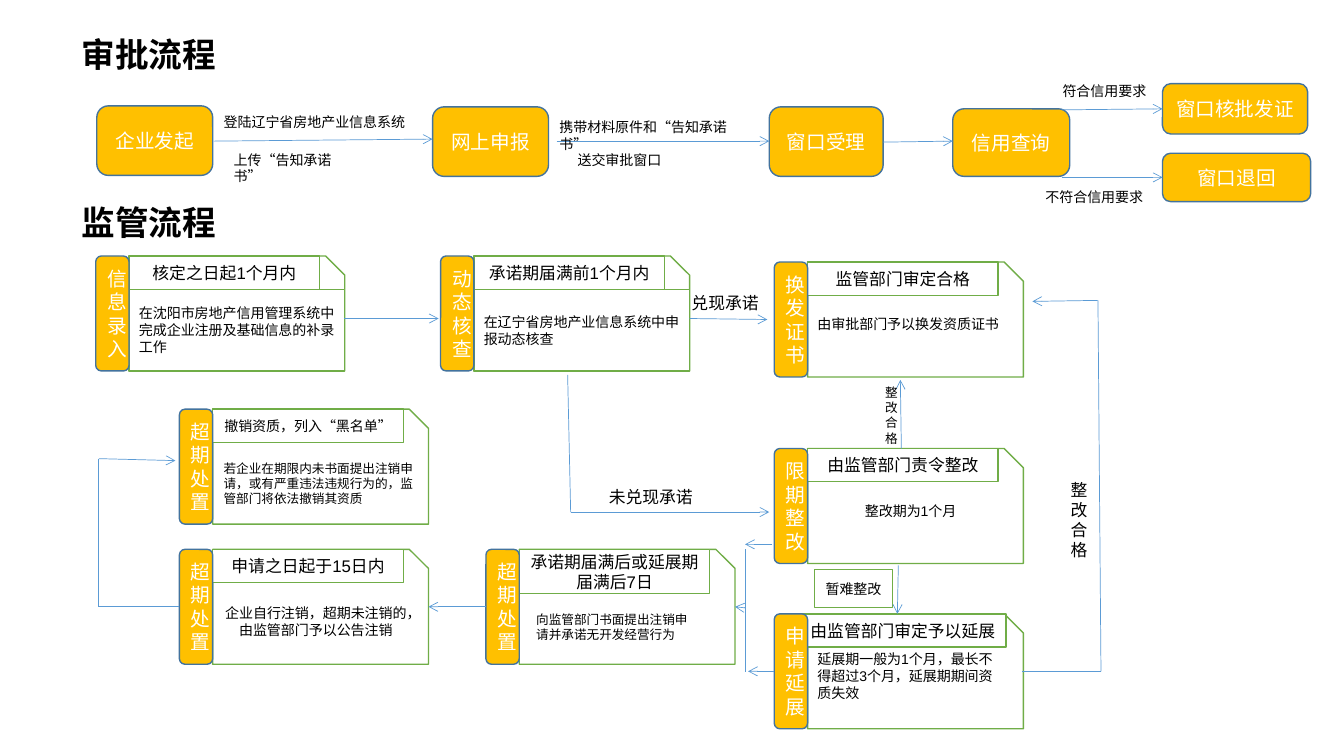
from dataclasses import dataclass
from itertools import pairwise

from lxml.etree import SubElement
from pptx import Presentation
from pptx.dml.color import RGBColor
from pptx.enum.shapes import MSO_CONNECTOR, MSO_SHAPE as Preset
from pptx.enum.text import MSO_ANCHOR as Anchor, MSO_AUTO_SIZE, PP_ALIGN as Align
from pptx.oxml.ns import qn
from pptx.shapes.autoshape import Shape
from pptx.slide import Slide
from pptx.text.text import TextFrame
from pptx.util import Emu, Pt

PX = 9144  # 100 px to the inch

BLACK = RGBColor(0x00, 0x00, 0x00)
WHITE = RGBColor(0xFF, 0xFF, 0xFF)
AMBER = RGBColor(0xFF, 0xC0, 0x00)
STEEL = RGBColor(0x43, 0x73, 0x9E)
GREEN = RGBColor(0x70, 0xAD, 0x47)
BLUE = RGBColor(0x5B, 0x9B, 0xD5)

TAB_W, CARD_W, CARD_H = 33, 214, 114
HEADING_W, HEADING_H = 189, 33


@dataclass(frozen=True)
class Box:
    x: int
    y: int
    w: int
    h: int


@dataclass(frozen=True)
class Step:
    box: Box
    text: str


@dataclass(frozen=True)
class Label:
    box: Box
    text: str
    size: int = 10


@dataclass(frozen=True)
class Route:
    points: tuple[tuple[int, int], ...]
    arrow: bool = True


@dataclass(frozen=True)
class Card:
    """A numbered stage: vertical tab, heading and body; a panel frames the body."""
    x: int
    y: int
    tab: str
    heading: str
    body: str = ""
    panel: bool = False
    body_align: Align = Align.LEFT
    body_top: int = 5
    heading_size: int = 12
    heading_dx: int = 0
    heading_w: int = HEADING_W
    heading_h: int = HEADING_H


STEPS = (
    Step(Box(96, 105, 115, 69), "企业发起"),
    Step(Box(429, 106, 115, 69), "网上申报"),
    Step(Box(763, 106, 113, 69), "窗口受理"),
    Step(Box(945, 108, 116, 67), "信用查询"),
    Step(Box(1153, 83, 144, 50), "窗口核批发证"),
    Step(Box(1153, 152, 147, 48), "窗口退回"),
)

CARDS = (
    Card(95, 254, "信息录入", "核定之日起1个月内",
         "在沈阳市房地产信用管理系统中完成企业注册及基础信息的补录工作", panel=True),
    Card(437, 254, "动态核查", "承诺期届满前1个月内",
         "在辽宁省房地产业信息系统中申报动态核查", panel=True),
    Card(768, 260, "换发证书", "监管部门审定合格", "由审批部门予以换发资质证书"),
    Card(768, 445, "限期整改", "由监管部门责令整改", "整改期为1个月", body_align=Align.CENTER),
    Card(768, 609, "申请延展", "由监管部门审定予以延展",
         "延展期一般为1个月，最长不得超过3个月，延展期期间资质失效",
         heading_dx=-8, heading_w=205),
    Card(482, 545, "超期处置", "承诺期届满后或延展期届满后7日", heading_h=44),
    Card(178, 545, "超期处置", "申请之日起于15日内",
         "企业自行注销，超期未注销的，由监管部门予以公告注销",
         body_align=Align.CENTER, body_top=25),
    Card(178, 406, "超期处置", "撤销资质，列入“黑名单”", heading_size=10),
)

LABELS = (
    Label(Box(212, 108, 217, 27), "登陆辽宁省房地产业信息系统"),
    Label(Box(222, 145, 136, 27), "上传“告知承诺书”"),
    Label(Box(545, 113, 201, 27), "携带材料原件和“告知承诺书”"),
    Label(Box(563, 145, 121, 27), "送交审批窗口"),
    Label(Box(1044, 77, 104, 27), "符合信用要求"),
    Label(Box(1027, 182, 125, 27), "不符合信用要求"),
    Label(Box(594, 478, 146, 30), "未兑现承诺", 12),
    Label(Box(676, 286, 91, 30), "兑现承诺", 12),
    Label(Box(868, 377, 25, 71), "整改合格", 9),
    Label(Box(1052, 471, 37, 91), "整改合格", 12),
    Label(Box(522, 602, 180, 40), "向监管部门书面提出注销申请并承诺无开发经营行为", 9),
    Label(Box(212, 452, 213, 55),
          "若企业在期限内未书面提出注销申请，或有严重违法违规行为的，监管部门将依法撤销其资质", 9),
)

ROUTES = (
    Route(((212, 140), (429, 138))),
    Route(((552, 140), (763, 140))),
    Route(((876, 141), (945, 140))),
    Route(((1053, 109), (1153, 108))),
    Route(((1053, 176), (1153, 176))),
    Route(((341, 316), (435, 316))),
    Route(((684, 316), (761, 317))),
    Route(((563, 372), (566, 508), (763, 508))),
    Route(((894, 445), (893, 377))),
    Route(((891, 561), (890, 609))),
    Route(((1014, 666), (1092, 666), (1089, 298), (1024, 299))),
    Route(((766, 540), (739, 540))),
    Route(((768, 666), (742, 666))),
    Route(((739, 545), (739, 667)), arrow=False),
    Route(((739, 603), (729, 602))),
    Route(((482, 602), (425, 602))),
    Route(((178, 602), (98, 602), (98, 455), (174, 457))),
)


def emu(box: Box) -> tuple[Emu, ...]:
    return tuple(Emu(n * PX) for n in (box.x, box.y, box.w, box.h))


def write(frame: TextFrame, text: str, size: int, color: RGBColor = BLACK,
          align: Align = Align.LEFT, anchor: Anchor = Anchor.MIDDLE) -> None:
    frame.word_wrap = True
    frame.auto_size = MSO_AUTO_SIZE.NONE
    frame.vertical_anchor = anchor
    frame.text = text
    paragraph = frame.paragraphs[0]
    paragraph.alignment = align
    paragraph.font.name = "Arial"
    paragraph.font.size = Pt(size)
    paragraph.font.color.rgb = color


def write_section_title(frame: TextFrame, text: str, anchor: Anchor) -> None:
    write(frame, text, 24, anchor=anchor)
    paragraph = frame.paragraphs[0]
    paragraph.line_spacing = 0.9
    paragraph.font.name = "Montserrat"
    paragraph.font.bold = True


def add_block(slide: Slide, preset: Preset, box: Box, fill: RGBColor, line: RGBColor) -> Shape:
    block = slide.shapes.add_shape(preset, *emu(box))
    block.shadow.inherit = False
    block.fill.solid()
    block.fill.fore_color.rgb = fill
    block.line.color.rgb = line
    block.line.width = Pt(1)
    return block


def add_step(slide: Slide, step: Step) -> None:
    block = add_block(slide, Preset.ROUNDED_RECTANGLE, step.box, AMBER, STEEL)
    write(block.text_frame, step.text, 14, WHITE, Align.CENTER)


def add_heading(slide: Slide, box: Box, text: str, size: int) -> None:
    block = add_block(slide, Preset.RECTANGLE, box, WHITE, GREEN)
    write(block.text_frame, text, size, align=Align.CENTER)


def add_card(slide: Slide, card: Card) -> None:
    left = card.x + TAB_W
    body = add_block(slide, Preset.SNIP_1_RECTANGLE, Box(left, card.y, CARD_W, CARD_H), WHITE, GREEN)
    add_heading(slide, Box(left + card.heading_dx, card.y, card.heading_w, card.heading_h),
                card.heading, card.heading_size)
    if card.panel:
        panel_box = Box(left, card.y + HEADING_H, CARD_W, CARD_H - HEADING_H)
        body = add_block(slide, Preset.RECTANGLE, panel_box, WHITE, GREEN)
    if card.body:
        write(body.text_frame, card.body, 10, align=card.body_align)
        body.text_frame.margin_top = Emu(card.body_top * PX)
    add_step(slide, Step(Box(card.x, card.y, TAB_W, CARD_H), card.tab))


def add_route(slide: Slide, route: Route) -> None:
    legs = list(pairwise(route.points))
    for number, (start, end) in enumerate(legs, 1):
        leg = slide.shapes.add_connector(
            MSO_CONNECTOR.STRAIGHT, *(Emu(n * PX) for n in (*start, *end)))
        leg.line.color.rgb = BLUE
        leg.line.width = Pt(0.5)
        if route.arrow and number == len(legs):
            SubElement(leg.line._get_or_add_ln(), qn("a:tailEnd"), type="arrow")
        SubElement(leg._element.spPr, qn("a:effectLst"))


def main() -> None:
    deck = Presentation()
    deck.slide_width, deck.slide_height = Emu(1333 * PX), Emu(750 * PX)
    slide = deck.slides.add_slide(deck.slide_layouts[5])

    approval = slide.shapes.title
    approval.left, approval.top, approval.width, approval.height = emu(Box(71, 18, 1150, 76))
    write_section_title(approval.text_frame, "审批流程", Anchor.MIDDLE)
    supervision = slide.shapes.add_textbox(*emu(Box(71, 200, 195, 46)))
    write_section_title(supervision.text_frame, "监管流程", Anchor.TOP)

    for step in STEPS:
        add_step(slide, step)
    for card in CARDS:
        add_card(slide, card)
    add_heading(slide, Box(808, 565, 77, 38), "暂难整改", 10)
    for route in ROUTES:
        add_route(slide, route)
    for label in LABELS:
        note = slide.shapes.add_textbox(*emu(label.box))
        write(note.text_frame, label.text, label.size, anchor=Anchor.TOP)
    deck.save("out.pptx")


if __name__ == "__main__":
    main()
